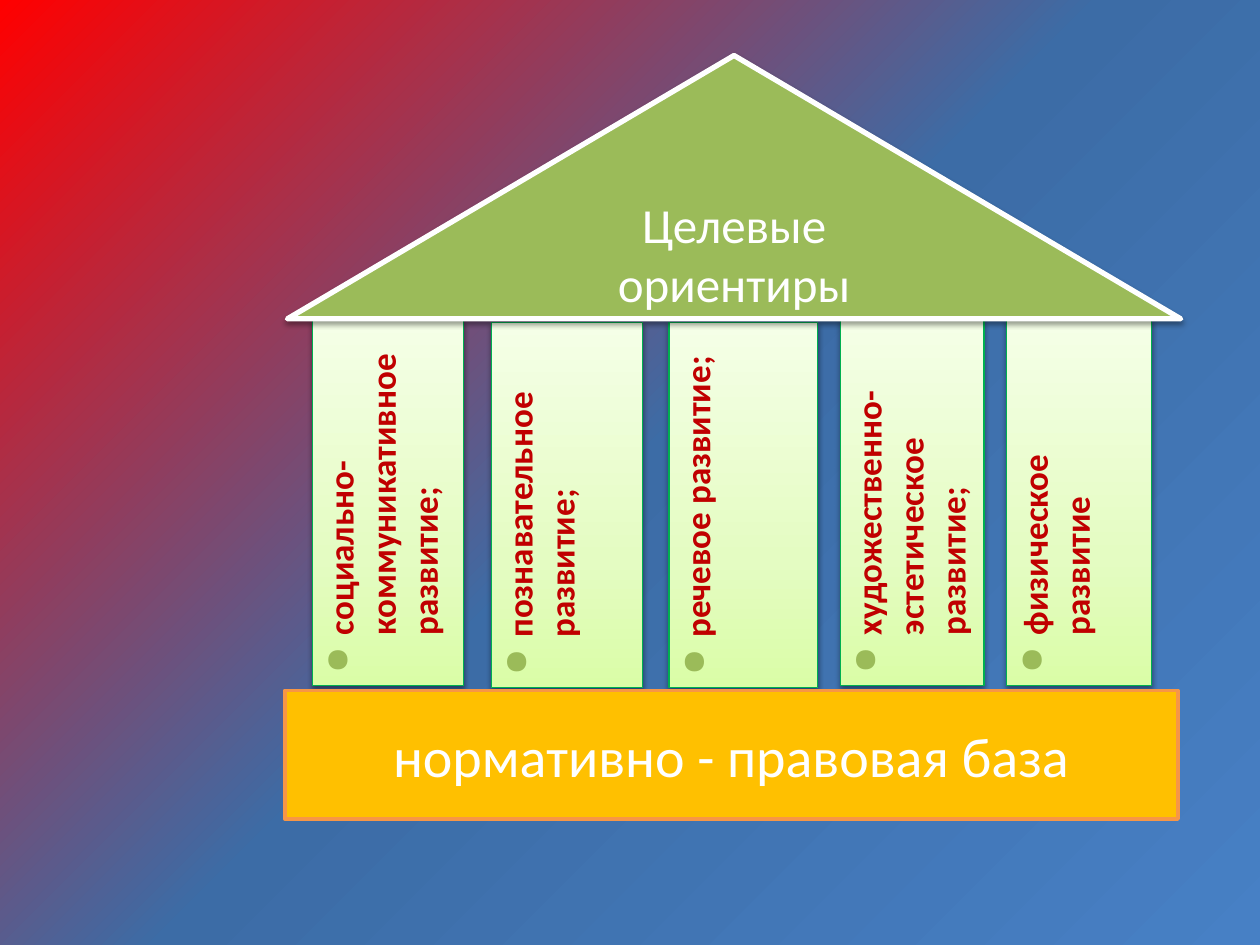
from lxml import etree
from pptx import Presentation
from pptx.dml.color import RGBColor
from pptx.enum import shapes, text
from pptx.oxml.ns import qn
from pptx.util import Pt

WHITE = RGBColor(0xFF, 0xFF, 0xFF)
RED = RGBColor(0xC0, 0x00, 0x00)
GREEN = RGBColor(0x9B, 0xBB, 0x59)
PILLAR_LINE = RGBColor(0x00, 0xB0, 0x50)
GOLD = RGBColor(0xFF, 0xC0, 0x00)
ORANGE = RGBColor(0xF7, 0x96, 0x46)
BLACK = RGBColor(0x00, 0x00, 0x00)

BACKDROP = [(0, RGBColor(0xFF, 0x00, 0x00)),
            (50, RGBColor(0x3C, 0x6C, 0xA6)),
            (100, RGBColor(0x47, 0x80, 0xC5))]
PILLAR = [(0, RGBColor(0xDA, 0xFD, 0xA7)),
          (35, RGBColor(0xE4, 0xFC, 0xC2)),
          (100, RGBColor(0xF5, 0xFF, 0xE7))]

PILLARS = [
    (178.6, 182.9, 86.4, "социально-коммуникативное развитие;"),
    (280.8, 184.3, 86.4, "познавательное развитие;"),
    (382.3, 184.3, 85, "речевое развитие;"),
    (480.2, 182.9, 82.1, "художественно-эстетическое развитие;"),
    (575.3, 182.9, 82.8, "физическое развитие"),
]
PILLAR_HEIGHT = 208.8


def add(parent, tag, **attrs):
    return etree.SubElement(parent, qn(tag), {k: str(v) for k, v in attrs.items()})


def add_color(parent, color):
    return add(parent, "a:srgbClr", val=color)


def write(tf, words, size, color, bold=False, align=text.PP_ALIGN.CENTER,
          anchor=text.MSO_ANCHOR.MIDDLE):
    tf.word_wrap = True
    tf.vertical_anchor = anchor
    p = tf.paragraphs[0]
    p.alignment = align
    r = p.add_run()
    r.text = words
    r.font.name = "Calibri"
    r.font.size = Pt(size)
    r.font.bold = bold
    r.font.color.rgb = color
    return p


class Temple:
    def __init__(self, prs):
        self.s = prs.slides.add_slide(prs.slide_layouts[6])

    def gradient(self, fill, element, stops, angle):
        fill.gradient()
        fill.gradient_angle = 360 - angle
        gs_list = element.find(".//" + qn("a:gsLst"))
        for gs in list(gs_list):
            gs_list.remove(gs)
        for pos, color in stops:
            add_color(add(gs_list, "a:gs", pos=pos * 1000), color)

    def background(self, stops, angle):
        self.gradient(self.s.background.fill, self.s.element, stops, angle)

    def shape(self, kind, box, line, width, fill=None, shadow=True):
        sp = self.s.shapes.add_shape(kind, *(Pt(v) for v in box))
        sp.shadow.inherit = False
        sp.line.color.rgb = line
        sp.line.width = Pt(width)
        if fill is not None:
            sp.fill.solid()
            sp.fill.fore_color.rgb = fill
        if shadow:
            effects = sp.element.spPr.find(qn("a:effectLst"))
            outer = add(effects, "a:outerShdw", blurRad=Pt(3.1), dist=Pt(1.6),
                        dir=5400000, rotWithShape=0)
            add(add_color(outer, BLACK), "a:alpha", val=38000)
        return sp

    def pillar(self, left, top, width, words):
        sp = self.shape(shapes.MSO_SHAPE.RECTANGLE, (left, top, width, PILLAR_HEIGHT),
                        PILLAR_LINE, 0.75)
        self.gradient(sp.fill, sp.element, PILLAR, 270)
        tf = sp.text_frame
        p = write(tf, words, 20, RED, bold=True, align=text.PP_ALIGN.LEFT,
                  anchor=text.MSO_ANCHOR.TOP)
        tf._txBody.bodyPr.set("vert", "vert270")
        p.space_before = Pt(4)
        pPr = p._p.get_or_add_pPr()
        pPr.set("marL", str(Pt(21.6)))
        pPr.set("indent", str(-Pt(21.6)))
        add_color(add(pPr, "a:buClr"), GREEN)
        add(pPr, "a:buSzPct", val=95000)
        add(pPr, "a:buChar", char="●")

    def base(self, box, words):
        sp = self.shape(shapes.MSO_SHAPE.RECTANGLE, box, ORANGE, 2, GOLD, shadow=False)
        write(sp.text_frame, words, 32, WHITE)

    def roof(self, box, words):
        sp = self.shape(shapes.MSO_SHAPE.ISOSCELES_TRIANGLE, box, WHITE, 3, GREEN)
        write(sp.text_frame, words, 28, WHITE)


def main():
    prs = Presentation()
    prs.slide_width, prs.slide_height = Pt(720), Pt(540)
    temple = Temple(prs)
    temple.background(BACKDROP, 45)
    for pillar in PILLARS:
        temple.pillar(*pillar)
    temple.base((162.7, 394.6, 510.5, 73.4), "нормативно - правовая база")
    temple.roof((164.2, 31.7, 510.5, 150.5), "Целевые ориентиры")
    prs.save("out.pptx")


if __name__ == "__main__":
    main()
